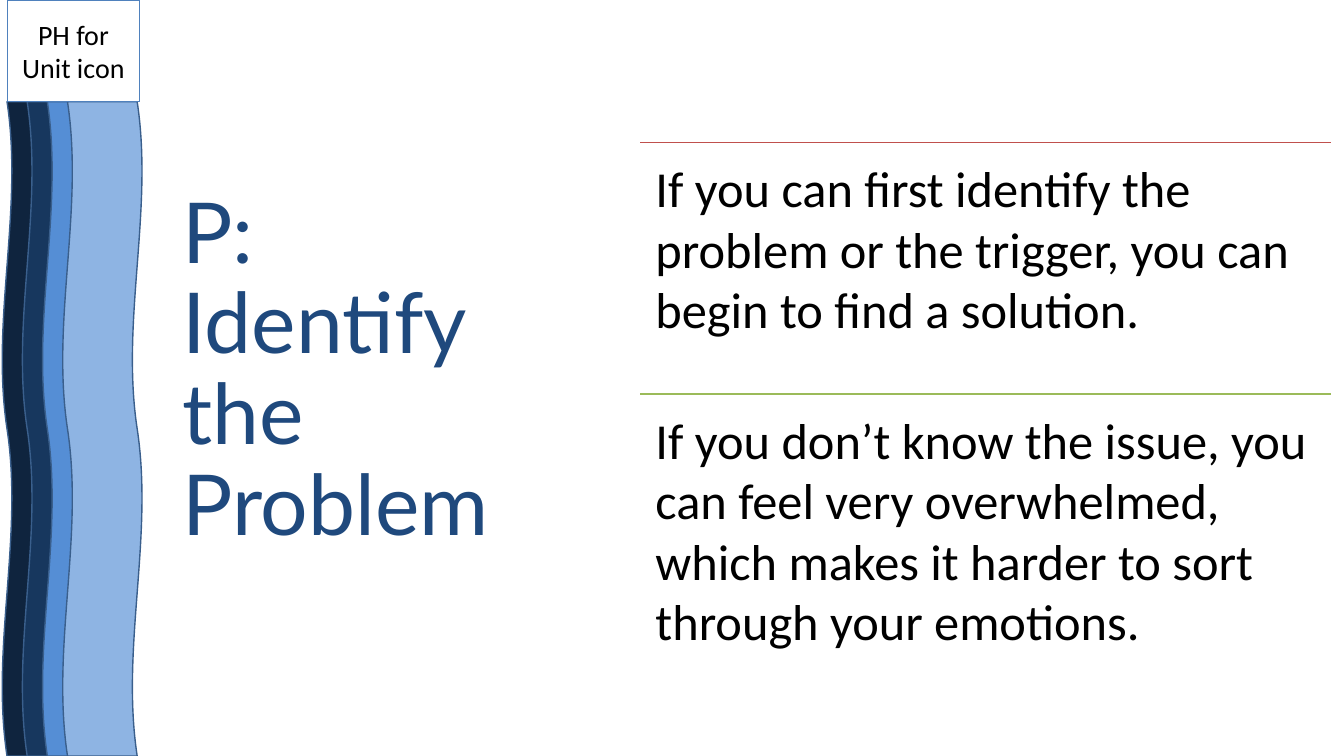
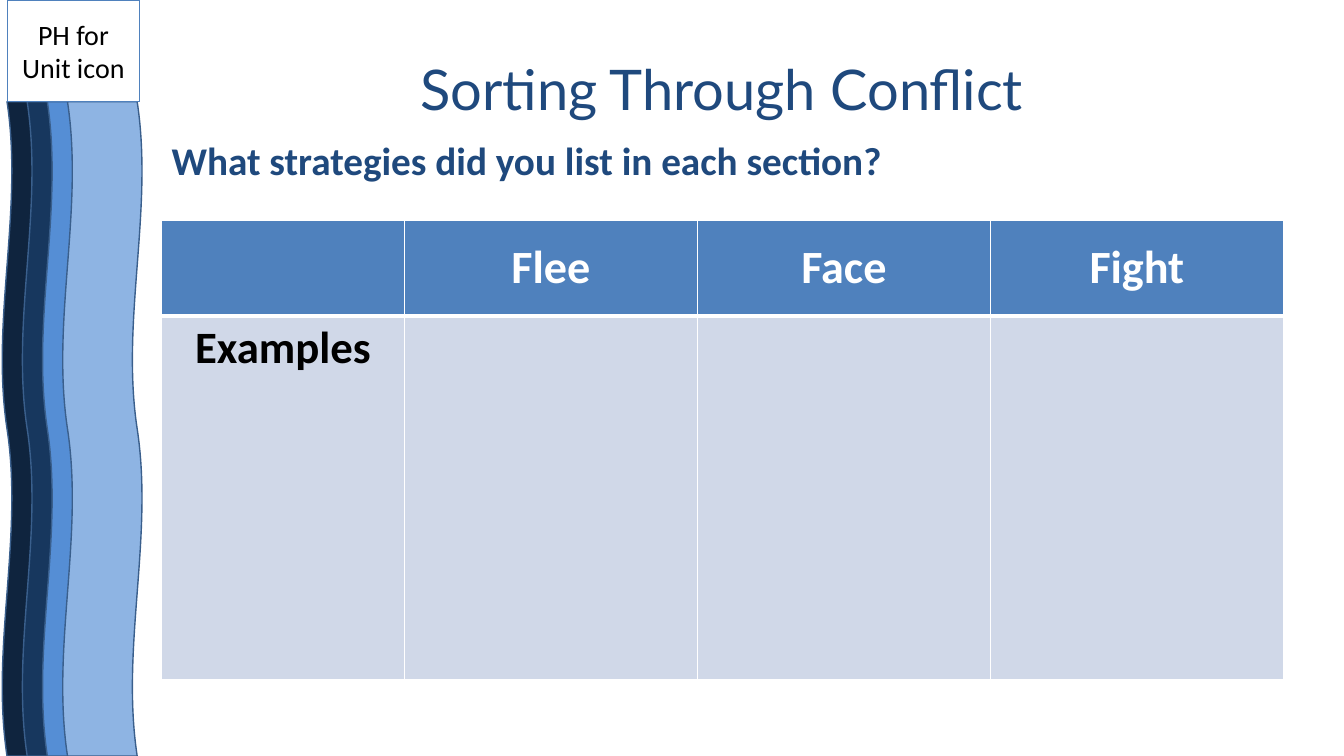
from dataclasses import dataclass

from lxml.etree import SubElement
from pptx import Presentation
from pptx.dml.color import RGBColor
from pptx.enum.shapes import MSO_CONNECTOR, MSO_SHAPE
from pptx.enum.text import MSO_ANCHOR, MSO_AUTO_SIZE, PP_ALIGN
from pptx.oxml.ns import qn
from pptx.util import Pt


@dataclass(frozen=True)
class Theme:
    title_font: str = "Lato"
    body_font: str = "Calibri"
    navy: str = "1F497D"
    blue: str = "4F81BD"
    pale: str = "D0D8E8"
    wave_line: str = "3A5F8C"
    waves: tuple = ("0F243E", "17375E", "558ED5", "8EB4E3")
    red: str = "C0504D"
    green: str = "9BBB59"
    black: str = "000000"
    white: str = "FFFFFF"
    big_title_size: int = 60
    title_size: int = 40
    statement_size: int = 36
    header_size: int = 33
    row_label_size: int = 32
    question_size: int = 28
    icon_size: int = 20
    tight: float = 0.9


THEME = Theme()

ICON_LABEL = "PH for Unit icon"
PROBLEM_TITLE = "P:\vIdentify the Problem"
STATEMENTS = [
    ("If you can first identify the problem or the trigger, "
     "you can begin to find a solution.", THEME.red),
    ("If you don’t know the issue, you can feel very overwhelmed, "
     "which makes it harder to sort through your emotions.", THEME.green),
]
CONFLICT_TITLE = "Sorting Through Conflict"
QUESTION = "What strategies did you list in each section?"
STRATEGIES = [
    ["", "Flee", "Face", "Fight"],
    ["Examples", "", "", ""],
]


def rgb(color):
    return RGBColor.from_string(color)


def write(frame, text, *, size, color, font=THEME.body_font, bold=False,
          align=PP_ALIGN.LEFT, spacing=1.0, plain=False):
    """Fill the frame with text; plain removes an inherited bullet and indent."""
    frame.word_wrap = True
    frame.text = text
    for paragraph in frame.paragraphs:
        if plain:
            properties = paragraph._p.get_or_add_pPr()
            properties.set("marL", "0")
            properties.set("indent", "0")
            SubElement(properties, qn("a:buNone"))
        paragraph.alignment = align
        paragraph.line_spacing = spacing
        paragraph.space_before = Pt(0)
        for run in paragraph.runs:
            run.font.name = font
            run.font.size = Pt(size)
            run.font.bold = bold
            run.font.color.rgb = rgb(color)


def place(shape, left, top, width, height):
    shape.left, shape.top = Pt(left), Pt(top)
    shape.width, shape.height = Pt(width), Pt(height)


def fill_placeholder(shape, box, text, anchor=MSO_ANCHOR.TOP, **text_format):
    place(shape, *box)
    shape.text_frame.auto_size = MSO_AUTO_SIZE.NONE
    shape.text_frame.vertical_anchor = anchor
    write(shape.text_frame, text, color=THEME.navy, spacing=THEME.tight,
          **text_format)


def add_outlined(slide, kind, box, line_color, line_width):
    shape = slide.shapes.add_shape(kind, *map(Pt, box))
    shape.shadow.inherit = False
    shape.line.color.rgb = rgb(line_color)
    shape.line.width = Pt(line_width)
    return shape


def decorate_master(presentation, slide):
    """Draw the wave band and icon box on the slide, then move them to the master."""
    length, breadth, step = 467.28, 56.88, 14.4
    center_x, center_y = 29.9, 306.36
    decorations = []
    for index, color in enumerate(THEME.waves):
        left = center_x + index * step - length / 2
        wave = add_outlined(slide, MSO_SHAPE.DOUBLE_WAVE,
                            (left, center_y - breadth / 2, length, breadth),
                            THEME.wave_line, 1)
        wave.rotation = 270
        wave.fill.solid()
        wave.fill.fore_color.rgb = rgb(color)
        decorations.append(wave)

    icon = add_outlined(slide, MSO_SHAPE.RECTANGLE, (5.3, 0, 94.3, 72.7),
                        THEME.blue, 0.75)
    icon.fill.background()
    icon.text_frame.vertical_anchor = MSO_ANCHOR.MIDDLE
    write(icon.text_frame, ICON_LABEL, size=THEME.icon_size, color=THEME.black,
          align=PP_ALIGN.CENTER)
    decorations.append(icon)

    master_shapes = presentation.slide_master.shapes
    for shape in decorations:
        next_id = max(existing.shape_id for existing in master_shapes) + 1
        shape.element.nvSpPr.cNvPr.set("id", str(next_id))
        master_shapes.element.append(shape.element)


def build_problem_slide(slide):
    fill_placeholder(slide.shapes.title, (123.1, 49, 299.5, 433.4),
                     PROBLEM_TITLE, MSO_ANCHOR.MIDDLE,
                     size=THEME.big_title_size, font=THEME.title_font)
    left, top, width, height, inset = 457.4, 101.8, 493.2, 179.6, 10.8
    for index, (statement, color) in enumerate(STATEMENTS):
        y = top + index * height
        rule = slide.shapes.add_connector(MSO_CONNECTOR.STRAIGHT, Pt(left), Pt(y),
                                          Pt(left + width), Pt(y))
        rule.line.color.rgb = rgb(color)
        rule.line.width = Pt(1)
        SubElement(rule.element.spPr, qn("a:effectLst"))
        box = slide.shapes.add_textbox(Pt(left), Pt(y), Pt(width), Pt(height))
        frame = box.text_frame
        frame.margin_left = frame.margin_right = Pt(inset)
        frame.margin_top = frame.margin_bottom = Pt(inset)
        write(frame, statement, size=THEME.statement_size, color=THEME.black)


def set_borders(cell, widths):
    """Give the cell white borders; widths maps L, R, T and B to points."""
    properties = cell._tc.get_or_add_tcPr()
    for position, (side, width) in enumerate(widths.items()):
        line = SubElement(properties, qn(f"a:ln{side}"), w=str(int(Pt(width))))
        fill = SubElement(line, qn("a:solidFill"))
        SubElement(fill, qn("a:srgbClr"), val=THEME.white)
        properties.insert(position, line)


def build_conflict_slide(slide):
    fill_placeholder(slide.shapes.title, (126.3, 41, 778.3, 60.5), CONFLICT_TITLE,
                     size=THEME.title_size, font=THEME.title_font,
                     align=PP_ALIGN.CENTER)

    left, width = 115.4, 801.4
    fill_placeholder(slide.placeholders[1], (left, 97.2, width, 59.8), QUESTION,
                     size=THEME.question_size, bold=True, plain=True)

    label_width, row_heights = 173.5, (68.5, 260)
    strategy_count = len(STRATEGIES[0]) - 1
    table = slide.shapes.add_table(
        len(STRATEGIES), len(STRATEGIES[0]), Pt(left), Pt(157.2), Pt(width),
        Pt(sum(row_heights))).table
    for index, column in enumerate(table.columns):
        column.width = Pt((width - label_width) / strategy_count
                          if index else label_width)
    for row_index, texts in enumerate(STRATEGIES):
        header = row_index == 0
        table.rows[row_index].height = Pt(row_heights[row_index])
        for column_index, text in enumerate(texts):
            cell = table.cell(row_index, column_index)
            cell.fill.solid()
            cell.fill.fore_color.rgb = rgb(THEME.blue if header else THEME.pale)
            cell.vertical_anchor = MSO_ANCHOR.MIDDLE if header else MSO_ANCHOR.TOP
            set_borders(cell, {"L": 1, "R": 1, "T": 1 if header else 3,
                               "B": 3 if header else 1})
            if text:
                write(cell.text_frame, text, bold=True, align=PP_ALIGN.CENTER,
                      size=THEME.header_size if header else THEME.row_label_size,
                      color=THEME.white if header else THEME.black)


def main():
    presentation = Presentation()
    presentation.slide_width, presentation.slide_height = Pt(960), Pt(540)
    layouts = presentation.slide_layouts
    problem_slide = presentation.slides.add_slide(layouts.get_by_name("Title Only"))
    decorate_master(presentation, problem_slide)
    build_problem_slide(problem_slide)
    build_conflict_slide(
        presentation.slides.add_slide(layouts.get_by_name("Title and Content")))
    presentation.save("out.pptx")


if __name__ == "__main__":
    main()
